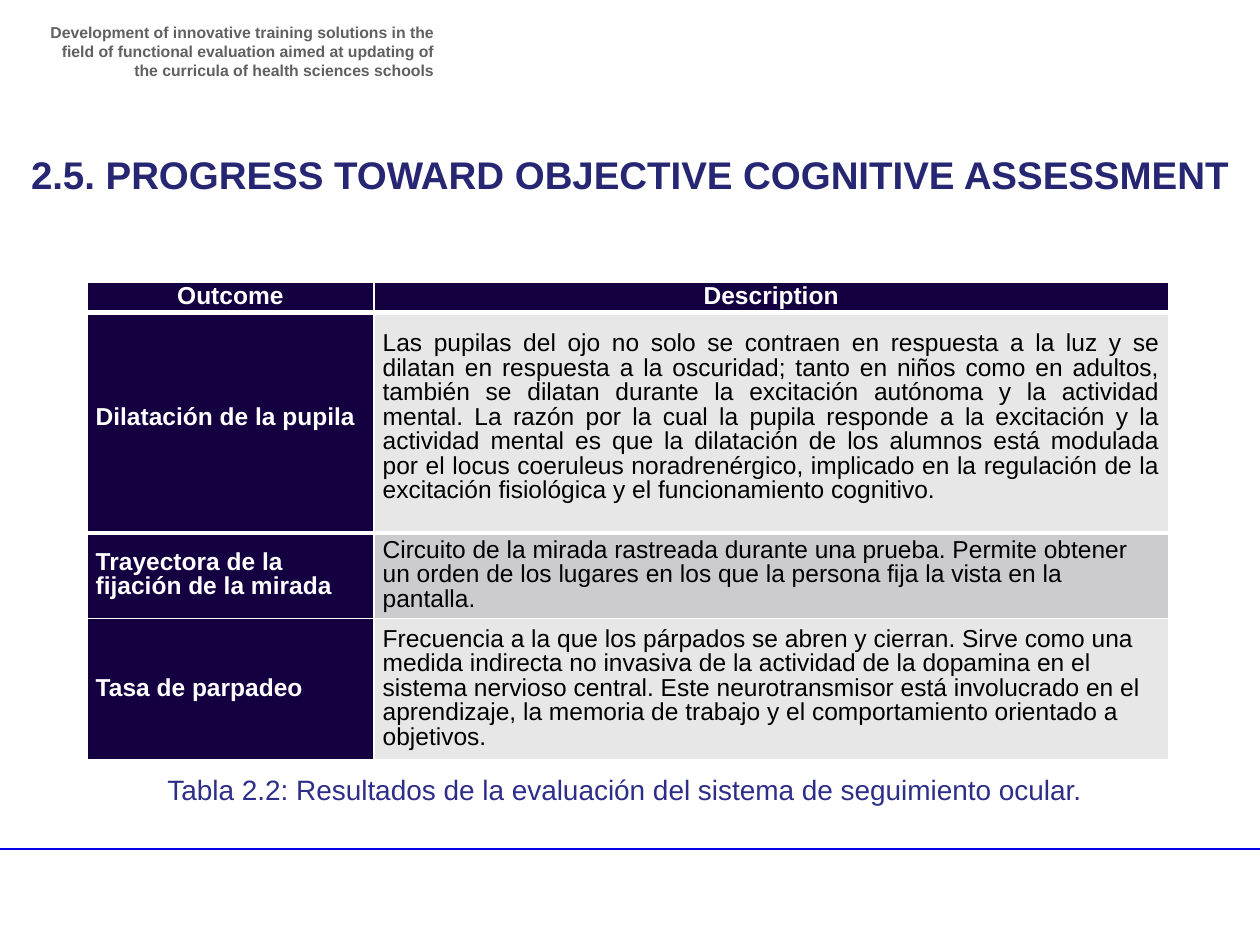
from lxml.etree import SubElement
from pptx import Presentation
from pptx.dml.color import RGBColor
from pptx.enum.shapes import MSO_CONNECTOR
from pptx.enum.text import MSO_ANCHOR, PP_ALIGN
from pptx.oxml.ns import qn
from pptx.util import Pt

COLORS = {name: RGBColor.from_string(value) for name, value in {
    "white": "FFFFFF", "black": "000000", "gray": "606060",
    "title": "262673", "caption": "2D2D8A", "rule": "0404E6",
    "label": "140041", "light": "E7E7E8", "medium": "CCCCCF",
}.items()}


def write(frame, text, size, color, bold=False, align=PP_ALIGN.LEFT):
    para = frame.paragraphs[0]
    para.text = text
    para.alignment = align
    para.font.name = "Arial"
    para.font.size = Pt(size)
    para.font.bold = bold
    para.font.color.rgb = COLORS[color]
    return para


def format_cell(cell, text, fill, color, bold, align, top=1, bottom=1):
    properties = cell._tc.get_or_add_tcPr()
    for side, width in (("L", 1), ("R", 1), ("T", top), ("B", bottom)):
        border = SubElement(properties, qn(f"a:ln{side}"), w=str(Pt(width)))
        paint = SubElement(border, qn("a:solidFill"))
        SubElement(paint, qn("a:srgbClr"), val=str(COLORS["white"]))
    cell.fill.solid()
    cell.fill.fore_color.rgb = COLORS[fill]
    cell.vertical_anchor = MSO_ANCHOR.MIDDLE
    cell.margin_left = cell.margin_right = Pt(5)
    cell.margin_top = cell.margin_bottom = 0
    para = write(cell.text_frame, text, 14, color, bold, align)
    para.line_spacing = Pt(14)


deck = Presentation()
deck.slide_width, deck.slide_height = Pt(720), Pt(540)
page = deck.slides.add_slide(deck.slide_layouts[5])

# Footer rule
rule = page.shapes.add_connector(
    MSO_CONNECTOR.STRAIGHT, Pt(-3.6), Pt(485.3), Pt(720), Pt(485.3))
rule.line.color.rgb = COLORS["rule"]
rule.line.width = Pt(1)
SubElement(rule._element.spPr, qn("a:effectLst"))

# Project name
project = page.shapes.add_textbox(Pt(20.2), Pt(9.4), Pt(234.7), Pt(33.8))
project.text_frame.word_wrap = True
write(project.text_frame,
      "Development of innovative training solutions in the ﬁeld of functional "
      "evaluation aimed at updating of the curricula of health sciences schools",
      9, "gray", True, PP_ALIGN.RIGHT)

# Title
title = page.shapes.title
title.left, title.top, title.width, title.height = Pt(7.2), Pt(82.8), Pt(705.6), Pt(33.8)
title.text_frame.vertical_anchor = MSO_ANCHOR.MIDDLE
write(title.text_frame, "2.5. PROGRESS TOWARD OBJECTIVE COGNITIVE ASSESSMENT",
      22, "title", True, PP_ALIGN.CENTER)

# Outcomes table, then its header in a table of its own
outcomes = [
    ("Dilatación de la pupila",
     "Las pupilas del ojo no solo se contraen en respuesta a la luz y se dilatan en "
     "respuesta a la oscuridad; tanto en niños como en adultos, también se dilatan "
     "durante la excitación autónoma y la actividad mental. La razón por la cual la "
     "pupila responde a la excitación y la actividad mental es que la dilatación de "
     "los alumnos está modulada por el locus coeruleus noradrenérgico, implicado en "
     "la regulación de la excitación fisiológica y el funcionamiento cognitivo."),
    ("Trayectora de la fijación de la mirada",
     "Circuito de la mirada rastreada durante una prueba. Permite obtener un orden de "
     "los lugares en los que la persona fija la vista en la pantalla."),
    ("Tasa de parpadeo",
     "Frecuencia a la que los párpados se abren y cierran. Sirve como una medida "
     "indirecta no invasiva de la actividad de la dopamina en el sistema nervioso "
     "central. Este neurotransmisor está involucrado en el aprendizaje, la memoria de "
     "trabajo y el comportamiento orientado a objetivos."),
]
tables = []
for top, heights in ((173.5, (131, 49, 80.6)), (161.3, (17.3,))):
    frame = page.shapes.add_table(
        len(heights), 2, Pt(49.7), Pt(top), Pt(618), Pt(sum(heights)))
    table = frame.table
    table.first_row = table.horz_banding = False
    for column, width in zip(table.columns, (164, 454)):
        column.width = Pt(width)
    for row, height in zip(table.rows, heights):
        row.height = Pt(height)
    tables.append(table)
body, header = tables

for index, (outcome, description) in enumerate(outcomes):
    borders = {"top": 3 if index == 1 else 1, "bottom": 3 if index == 0 else 1}
    format_cell(body.cell(index, 0), outcome, "label", "white", True,
                PP_ALIGN.LEFT, **borders)
    format_cell(body.cell(index, 1), description, ("light", "medium")[index % 2],
                "black", False, PP_ALIGN.LEFT if index else PP_ALIGN.JUSTIFY, **borders)

for index, heading in enumerate(("Outcome", "Description")):
    format_cell(header.cell(0, index), heading, "label", "white", True,
                PP_ALIGN.CENTER, bottom=3)

# Caption
caption = page.shapes.add_textbox(Pt(88.6), Pt(437.8), Pt(542.9), Pt(26.6))
caption.text_frame.word_wrap = False
write(caption.text_frame,
      "Tabla 2.2: Resultados de la evaluación del sistema de seguimiento ocular.",
      16, "caption")

deck.save("out.pptx")
